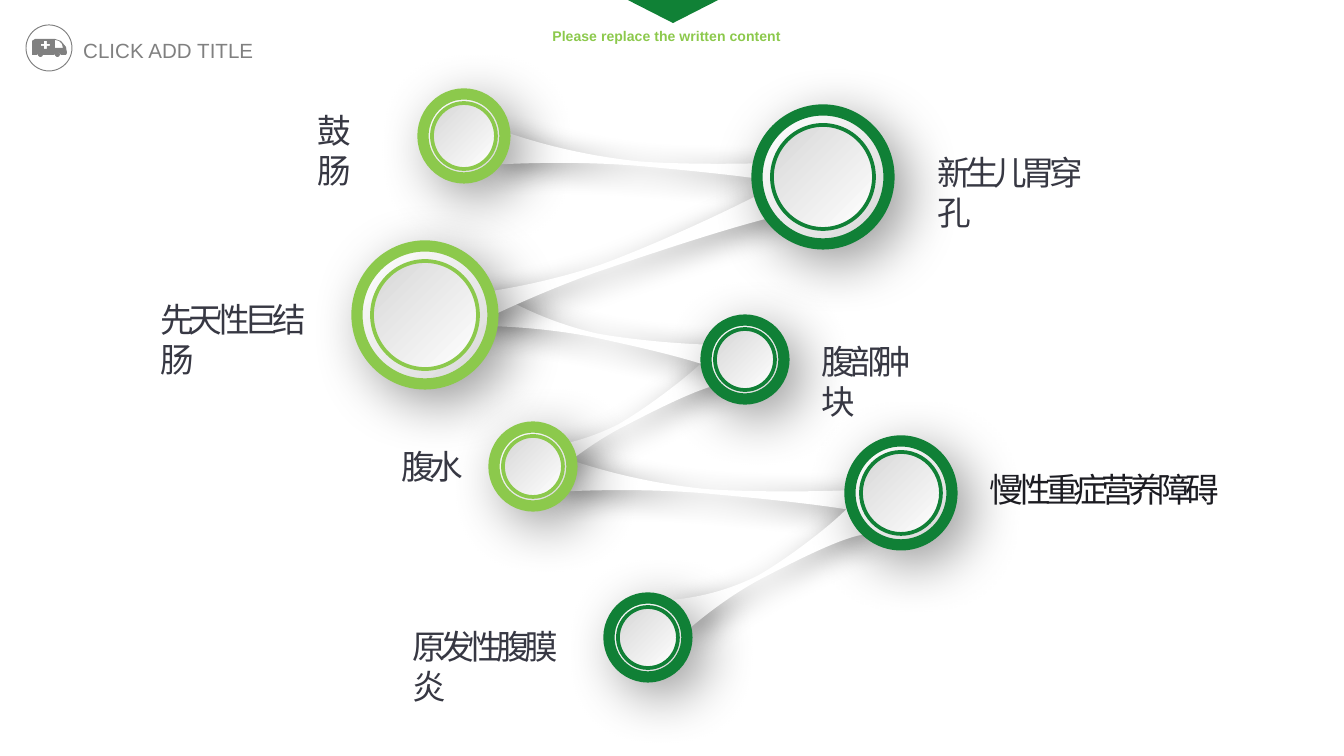
from lxml.etree import SubElement
from pptx import Presentation
from pptx.dml.color import RGBColor
from pptx.enum.shapes import MSO_SHAPE
from pptx.enum.text import MSO_ANCHOR, MSO_AUTO_SIZE, PP_ALIGN
from pptx.oxml.ns import qn
from pptx.util import Emu, Pt

SCALE = 914400 / 134.4  # EMU per px
COLORS = {
    "lime": "8CC94C", "green": "108036", "tab": "108136", "gray": "808080",
    "white": "FFFFFF", "silver": "D7D7D7", "ink": "373843", "dark": "1C1C22",
    "black": "000000",
}

# Band outline in a unit box: each curve is control, control, end
BAND_TOP = [
    (0.11, 0.28), (0.26, 0.54), (0.43, 0.56),
    (0.59, 0.54), (0.89, 0.26), (1, 0),
]
BAND_BOTTOM = [
    (0.9, 0.71), (0.58, 0.7), (0.42, 0.69),
    (0.25, 0.7), (0.09, 0.88), (0, 1),
]

# Boxes are left, top, width, height in px
BANDS = [
    ((562, 472, 335, 34), 4.9),
    ((528, 399, 203, 34), 331.9),
    ((489, 318, 251, 34), 11.8),
    ((497, 144, 335, 35), 4.9),
    ((426, 231, 401, 44), 340.9),
    ((668, 550, 203, 34), 331.9),
]
RINGS = [
    ((423, 94, 82, 84), "lime"),
    ((757, 110, 132, 134), "green"),
    ((357, 246, 136, 138), "lime"),
    ((706, 320, 78, 79), "green"),
    ((494, 427, 78, 79), "lime"),
    ((609, 598, 78, 79), "green"),
    ((850, 441, 102, 104), "green"),
]
LABELS = [
    ("慢性重症营养障碍", (976, 462, 314, 54), "dark"),
    ("腹水", (388, 439, 94, 54), "ink"),
    ("腹部肿块", (808, 334, 140, 54), "ink"),
    ("先天性巨结肠", (147, 292, 196, 54), "ink"),
    ("鼓肠", (304, 103, 83, 54), "ink"),
    ("新生儿胃穿孔", (924, 145, 196, 54), "ink"),
    ("原发性腹膜炎", (399, 619, 196, 54), "ink"),
]

# Ambulance outlines, relative to the icon's box
VAN_BODY = [(6, 16), (9, 14), (29, 14), (35, 16), (40, 22), (41, 28), (40, 30),
            (35, 30), (32, 27), (28, 30), (17, 30), (14, 27), (11, 30), (6, 30)]
VAN_WINDOW = [(29, 23), (37, 23), (36, 19), (33, 16), (29, 15)]
VAN_CROSS = [(15, 19), (18, 19), (18, 16), (21, 16), (21, 19), (24, 19),
             (24, 21), (21, 21), (21, 24), (18, 24), (18, 21), (15, 21)]


def px(value):
    return Emu(round(value * SCALE))


def color(name):
    return RGBColor.from_string(COLORS[name])


def style(shape, fill=None, line=None, width=1):
    shape.shadow.inherit = False
    if fill:
        shape.fill.solid()
        shape.fill.fore_color.rgb = color(fill)
    else:
        shape.fill.background()
    if line:
        shape.line.color.rgb = color(line)
        shape.line.width = Pt(width)
    else:
        shape.line.fill.background()


def add_preset(slide, kind, box, **look):
    shape = slide.shapes.add_shape(kind, *map(px, box))
    style(shape, **look)
    return shape


def set_gradient(shape, angle):
    shape.fill.gradient()
    shape.fill.gradient_angle = angle
    for stop, name in zip(shape.fill.gradient_stops, ("white", "silver")):
        stop.color.rgb = color(name)


def set_shadow(shape, blur, distance):
    effects = shape._element.spPr.find(qn("a:effectLst"))
    shadow = SubElement(effects, qn("a:outerShdw"), {
        "blurRad": str(Pt(blur)), "dist": str(Pt(distance)),
        "dir": "2700000", "algn": "tl", "rotWithShape": "0"})
    tint = SubElement(shadow, qn("a:srgbClr"), val=COLORS["black"])
    SubElement(tint, qn("a:alpha"), val="40000")


def add_text(slide, text, box, font, tint, wrap=True, align=PP_ALIGN.LEFT,
             line_spacing=None, spacing=None):
    shape = slide.shapes.add_textbox(*map(px, box))
    frame = shape.text_frame
    frame_format = {"word_wrap": wrap, "vertical_anchor": MSO_ANCHOR.TOP,
                    "auto_size": MSO_AUTO_SIZE.SHAPE_TO_FIT_TEXT}
    for name, value in frame_format.items():
        setattr(frame, name, value)
    paragraph = frame.paragraphs[0]
    paragraph.alignment = align
    paragraph.line_spacing = line_spacing
    run = paragraph.add_run()
    run.text = text
    for name, value in font.items():
        setattr(run.font, name, value)
    run.font.color.rgb = color(tint)
    if spacing:
        properties = run._r.get_or_add_rPr()
        properties.set("spc", str(spacing * 100))
        SubElement(properties, qn("a:ea"), typeface=font["name"])


def curve_segments(segments):
    """Turn each run of three line segments into one cubic curve."""
    for first, second, end in zip(*[iter(segments)] * 3):
        first.tag = qn("a:cubicBezTo")
        for segment in (second, end):
            first.append(segment[0])
            segment.getparent().remove(segment)


def add_band(slide, box, rotation):
    left, top, width, height = box
    points = [(px(left + x * width), px(top + y * height))
              for x, y in [(0, 0), *BAND_TOP, (1, 1), *BAND_BOTTOM]]
    builder = slide.shapes.build_freeform(*points[0])
    builder.add_line_segments(points[1:])
    band = builder.convert_to_shape()
    segments = list(band._element.iter(qn("a:lnTo")))
    corner = len(BAND_TOP)
    curve_segments(segments[:corner])
    curve_segments(segments[corner + 1:corner + 1 + len(BAND_BOTTOM)])
    style(band, fill="white")
    band.rotation = rotation
    set_shadow(band, blur=15, distance=5)


def add_ring(slide, box, tint):
    left, top, width, height = box
    inset = round(width * 0.11)
    inner = (left + inset, top + inset, width - 2 * inset, height - 2 * inset)
    # Outer disc casts the shadow, inner disc has the reversed gradient
    for disc_box, line_width, angle in ((box, 6, 315), (inner, 2, 135)):
        disc = add_preset(slide, MSO_SHAPE.OVAL, disc_box, line=tint, width=line_width)
        set_gradient(disc, angle)
        if disc_box == box:
            set_shadow(disc, blur=30, distance=10)


def add_icon(slide, box):
    left, top, width, height = box
    for wheel in (12, 29):
        add_preset(slide, MSO_SHAPE.OVAL, (left + wheel, top + 27, 5, 5), fill="gray")
    builder = slide.shapes.build_freeform(*VAN_BODY[0], scale=SCALE)
    builder.add_line_segments(VAN_BODY[1:])
    for hole in (VAN_WINDOW, VAN_CROSS):
        builder.move_to(*hole[0])
        builder.add_line_segments(hole[1:])
    style(builder.convert_to_shape(px(left), px(top)), fill="gray")
    add_preset(slide, MSO_SHAPE.OVAL, box, line="gray", width=0.5)


def add_header(slide, box):
    left, top, width, height = box
    # Title with icon
    add_text(slide, "CLICK ADD TITLE", (left + 70, top + 27, 215, 38),
             {"name": "Arial", "size": Pt(11)}, "gray", wrap=False, line_spacing=1.2)
    add_icon(slide, (left + 26, top + 25, 46, 46))
    # Centred note below the tab
    center = left + width // 2
    add_text(slide, "Please replace the written content", (center - 134, top + 21, 257, 31),
             {"name": "Arial", "size": Pt(7.5), "bold": True}, "lime",
             wrap=False, align=PP_ALIGN.CENTER)
    tab = add_preset(slide, MSO_SHAPE.ISOSCELES_TRIANGLE,
                     (center - 48, top - 2, 98, 25), fill="tab")
    tab.rotation = 180


def add_network(slide):
    for box, rotation in BANDS:
        add_band(slide, box, rotation)
    for box, tint in RINGS:
        add_ring(slide, box, tint)
    for text, box, tint in LABELS:
        add_text(slide, text, box, {"name": "DejaVu Sans Mono", "size": Pt(18)},
                 tint, spacing=-3)


def main():
    presentation = Presentation()
    presentation.slide_width, presentation.slide_height = px(1344), px(756)
    slide = presentation.slides.add_slide(presentation.slide_layouts[6])
    add_header(slide, (0, 0, 1344, 80))
    add_network(slide)
    presentation.save("out.pptx")


if __name__ == "__main__":
    main()
